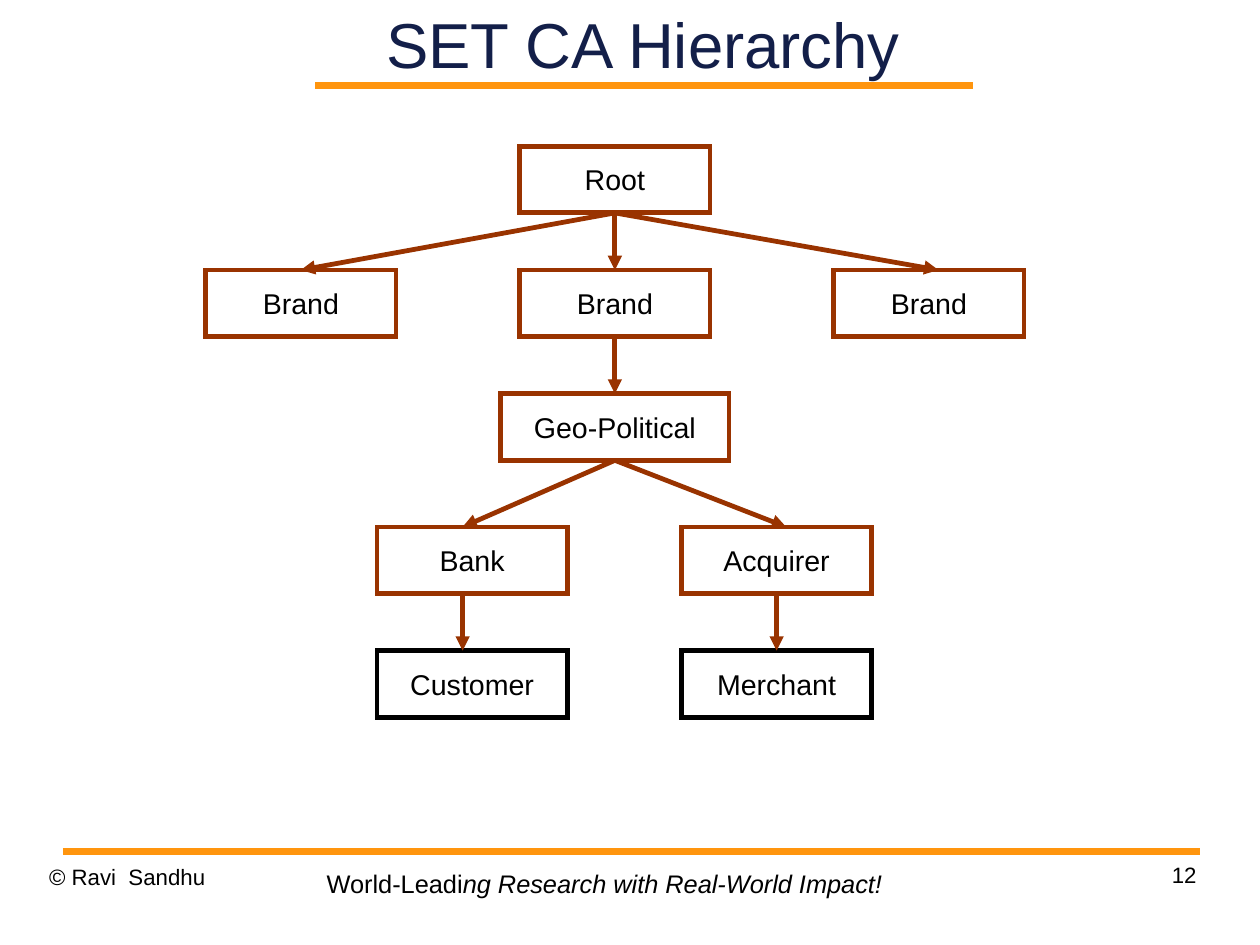
import dataclasses

import lxml.etree
import pptx
import pptx.dml.color
import pptx.enum.shapes
import pptx.enum.text
import pptx.oxml.ns
import pptx.util

ALIGN = pptx.enum.text.PP_ALIGN
ANCHOR = pptx.enum.text.MSO_ANCHOR


@dataclasses.dataclass(frozen=True)
class Theme:
    """Hold the colours, type sizes and line widths of the deck."""
    font: str = "Arial"
    ink: str = "000000"
    heading: str = "131F49"
    rule: str = "FF950E"
    authority: str = "993300"
    title_size: float = 40
    node_size: float = 18
    tagline_size: float = 16
    footer_size: float = 14
    rule_width: float = 4.31
    node_width: float = 3


THEME = Theme()

GRID_COLUMNS = 86
ROW_TOPS = (0, 13, 26, 40, 53)
NODE_HEIGHT = 7
NODES = (
    ("Root", 0, 43, 20, THEME.authority),
    ("Brand", 1, 43, 20, THEME.authority),
    ("Brand", 1, 76, 20, THEME.authority),
    ("Brand", 1, 10, 20, THEME.authority),
    ("Geo-Political", 2, 43, 24, THEME.authority),
    ("Bank", 3, 28, 20, THEME.authority),
    ("Acquirer", 3, 60, 20, THEME.authority),
    ("Customer", 4, 28, 20, THEME.ink),
    ("Merchant", 4, 60, 20, THEME.ink),
)
ARROWS = (
    (0, 43, 10), (0, 43, 77), (0, 43, 43), (1, 43, 43),
    (2, 43, 27), (2, 43, 61), (3, 27, 27), (3, 60, 60),
)


def inches(*lengths):
    """Convert lengths in inches to slide units."""
    return [pptx.util.Inches(length) for length in lengths]


def colour(code):
    """Return the colour for a hex code."""
    return pptx.dml.color.RGBColor.from_string(code)


def add_line_part(shape, tag, **attributes):
    """Append an element to the outline of a shape."""
    name = pptx.oxml.ns.qn
    outline = shape._element.spPr.find(name("a:ln"))
    lxml.etree.SubElement(outline, name(tag), **attributes)


def write(frame, text, size, color=THEME.ink, italic_text="", align=ALIGN.LEFT,
          anchor=ANCHOR.TOP, wrap=True, inset=True, spacing=None):
    """Write one formatted paragraph into a text frame."""
    frame.word_wrap = wrap
    frame.auto_size = pptx.enum.text.MSO_AUTO_SIZE.NONE
    frame.vertical_anchor = anchor
    if not inset:
        frame.margin_left = frame.margin_right = 0
        frame.margin_top = frame.margin_bottom = 0
    para = frame.paragraphs[0]
    para.alignment = align
    if spacing:
        para.line_spacing = spacing
    for words, italic in ((text, False), (italic_text, True)):
        if words:
            span = para.add_run()
            span.text = words
            span.font.name = THEME.font
            span.font.size = pptx.util.Pt(size)
            span.font.italic = italic
            span.font.color.rgb = colour(color)


def draw_line(page, start, end, color, width, arrow=False):
    """Draw a straight line, with an optional arrowhead at its end."""
    line = page.shapes.add_connector(
        pptx.enum.shapes.MSO_CONNECTOR.STRAIGHT, *inches(*start, *end))
    line.line.color.rgb = colour(color)
    line.line.width = pptx.util.Pt(width)
    if arrow:
        add_line_part(line, "a:tailEnd", type="triangle")
    lxml.etree.SubElement(line._element.spPr, pptx.oxml.ns.qn("a:effectLst"))


def add_heading(page, box, text):
    """Place the title in its box with a rule under it."""
    left, top, width, height = box
    title = page.shapes.title
    title.left, title.top, title.width, title.height = inches(*box)
    write(title.text_frame, text, THEME.title_size, THEME.heading,
          align=ALIGN.CENTER, anchor=ANCHOR.MIDDLE, inset=False)
    bottom = top + height
    draw_line(page, (left + 0.35, bottom), (left + width - 0.33, bottom),
              THEME.rule, THEME.rule_width)


def add_footer(page, box):
    """Place the rule, copyright, tagline and page number in a box."""
    left, top, width, height = box
    draw_line(page, (left + 0.12, top), (left + width + 0.03, top),
              THEME.rule, THEME.rule_width)
    side = 2.57
    owner = page.shapes.add_textbox(*inches(left, top + 0.1, side, height - 0.1))
    write(owner.text_frame, "© Ravi  Sandhu", THEME.footer_size,
          inset=False, spacing=1.01)
    number = page.shapes.add_textbox(
        *inches(left + width - side, top + 0.08, side, height - 0.1))
    write(number.text_frame, "12", THEME.footer_size, align=ALIGN.RIGHT,
          inset=False, spacing=1.01)
    tagline = page.shapes.add_textbox(*inches(left + 2.33, top + 0.1, 5.08, 0.37))
    write(tagline.text_frame, "World-Leadi", THEME.tagline_size,
          italic_text="ng Research with Real-World Impact!", wrap=False)


def add_hierarchy(page, box):
    """Draw the certificate authorities and their arrows on a square grid."""
    left, top, width, _ = box
    unit = width / GRID_COLUMNS

    def point(column, row):
        """Return the place of a grid point in inches."""
        return left + column * unit, top + row * unit

    for label, level, centre, span, color in NODES:
        node = page.shapes.add_shape(
            pptx.enum.shapes.MSO_SHAPE.RECTANGLE,
            *inches(*point(centre - span / 2, ROW_TOPS[level]),
                    span * unit, NODE_HEIGHT * unit))
        node.shadow.inherit = False
        node.fill.background()
        node.line.color.rgb = colour(color)
        node.line.width = pptx.util.Pt(THEME.node_width)
        add_line_part(node, "a:miter", lim="800000")
        write(node.text_frame, label, THEME.node_size, align=ALIGN.CENTER,
              anchor=ANCHOR.MIDDLE, wrap=False)
    for level, start, end in ARROWS:
        draw_line(page, point(start, ROW_TOPS[level] + NODE_HEIGHT),
                  point(end, ROW_TOPS[level + 1]),
                  THEME.authority, THEME.node_width, arrow=True)


def main():
    """Build and save the deck."""
    deck = pptx.Presentation()
    deck.slide_width = pptx.util.Pt(793.75)
    deck.slide_height = pptx.util.Pt(595.25)
    page = deck.slides.add_slide(deck.slide_layouts.get_by_name("Title Only"))
    add_heading(page, (2.41, 0, 6.43, 0.75), "SET CA Hierarchy")
    add_hierarchy(page, (1.8, 1.28, 7.16, 5))
    add_footer(page, (0.43, 7.45, 10.04, 0.67))
    deck.save("out.pptx")


if __name__ == "__main__":
    main()
